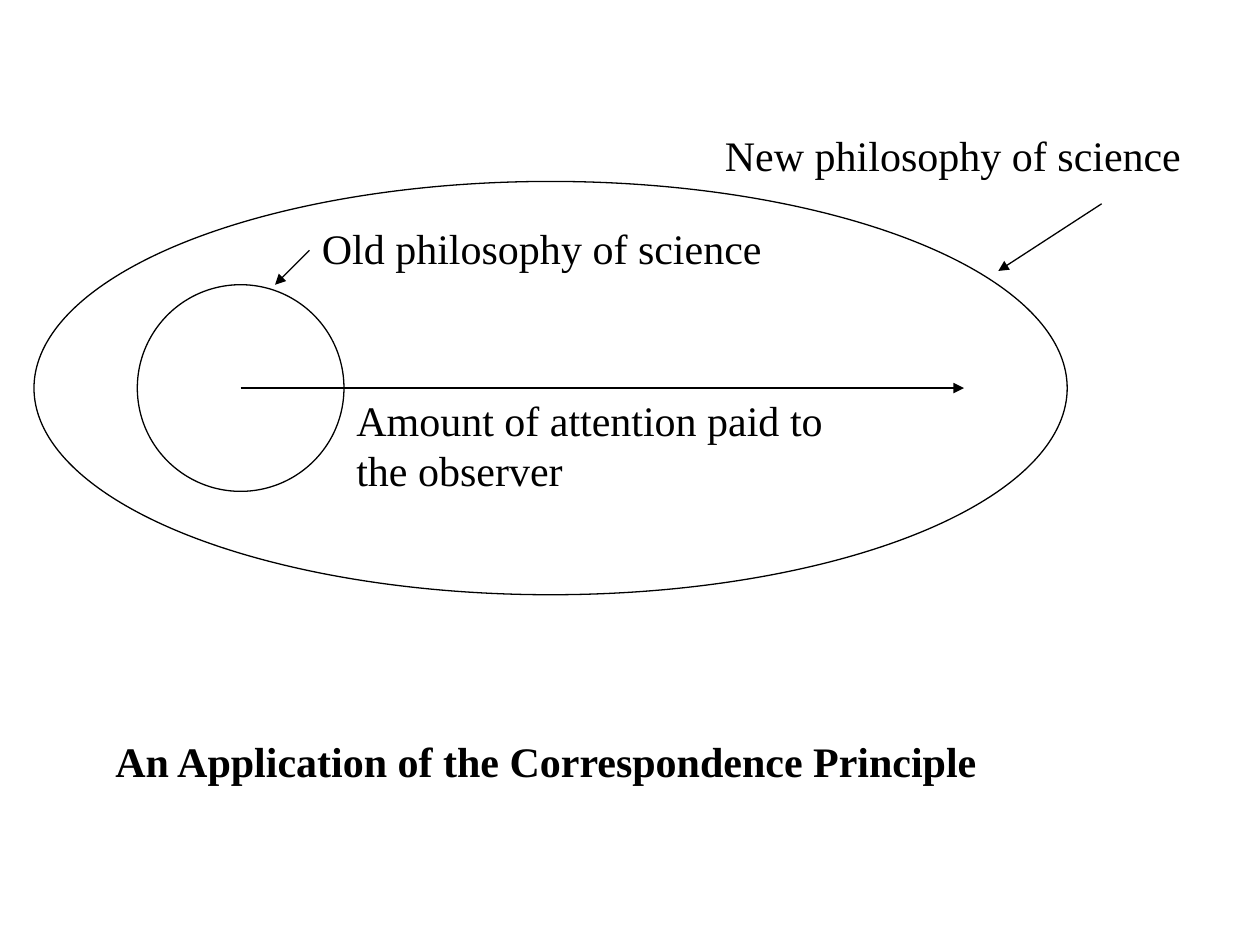
from typing import NamedTuple

from lxml.etree import SubElement as Sub
from pptx import Presentation
from pptx.dml.color import RGBColor
from pptx.enum.shapes import MSO_CONNECTOR as Link, MSO_SHAPE as Kind
from pptx.oxml.ns import qn
from pptx.util import Inches, Pt

INK, PAPER = "000000", "FFFFFF"
FONT = "Times New Roman"
LEFT, TOP = 0.27, 1.44  # grid origin: corner of the outer oval
UNIT = 8.2 / 30  # the outer oval spans 30 columns and 12 rows


class Box(NamedTuple):
    col: float
    row: float
    cols: float
    rows: float


class Arrow(NamedTuple):
    col: float
    row: float
    to_col: float
    to_row: float


class Label(NamedTuple):
    text: str
    box: Box
    bold: bool = False


OVALS = [Box(0, 0, 30, 12), Box(3, 3, 6, 6)]
ARROWS = [
    Arrow(6, 6, 27, 6),  # attention axis
    Arrow(8, 2, 7, 3),  # to the old view
    Arrow(31, 0.65, 28, 2.6),  # to the new view
]
LABELS = [
    Label("New philosophy of science", Box(19.7, -1.7, 15.5, 2)),
    Label("Old philosophy of science", Box(8, 1, 15, 2)),
    Label("Amount of attention paid to the observer", Box(9, 6, 16, 4)),
    Label("An Application of the Correspondence Principle",
          Box(2, 15.9, 28, 2), bold=True),
]


def hue(code: str) -> RGBColor:
    return RGBColor.from_string(code)


def across(col: float) -> int:
    return Inches(LEFT + col * UNIT)


def down(row: float) -> int:
    return Inches(TOP + row * UNIT)


def place(box: Box) -> tuple:
    return (across(box.col), down(box.row),
            Inches(box.cols * UNIT), Inches(box.rows * UNIT))


def ink(line) -> None:
    line.color.rgb = hue(INK)
    line.width = Pt(0.75)


def draw_oval(slide, box: Box) -> None:
    oval = slide.shapes.add_shape(Kind.OVAL, *place(box))
    oval.shadow.inherit = False
    oval.fill.solid()
    oval.fill.fore_color.rgb = hue(PAPER)
    ink(oval.line)


def draw_arrow(slide, arrow: Arrow) -> None:
    link = slide.shapes.add_connector(
        Link.STRAIGHT, across(arrow.col), down(arrow.row),
        across(arrow.to_col), down(arrow.to_row))
    ink(link.line)
    Sub(link.line._get_or_add_ln(), qn("a:tailEnd"), type="triangle")
    Sub(link._element.spPr, qn("a:effectLst"))


def write(slide, text: str, box: Box, *, size: float = 24,
          bold: bool = False, color: str = INK) -> None:
    frame = slide.shapes.add_textbox(*place(box)).text_frame
    frame.word_wrap = True
    run = frame.paragraphs[0].add_run()
    run.text = text
    run.font.name = FONT
    run.font.size = Pt(size)
    run.font.bold = bold
    run.font.color.rgb = hue(color)


def main() -> None:
    deck = Presentation()
    deck.slide_width, deck.slide_height = Inches(10), Inches(7.5)
    slide = deck.slides.add_slide(deck.slide_layouts[6])

    # Nested views, outer first
    for oval in OVALS:
        draw_oval(slide, oval)

    # Axis and pointers
    for arrow in ARROWS:
        draw_arrow(slide, arrow)

    # Labels and title
    for label in LABELS:
        write(slide, label.text, label.box, bold=label.bold)

    deck.save("out.pptx")


if __name__ == "__main__":
    main()
